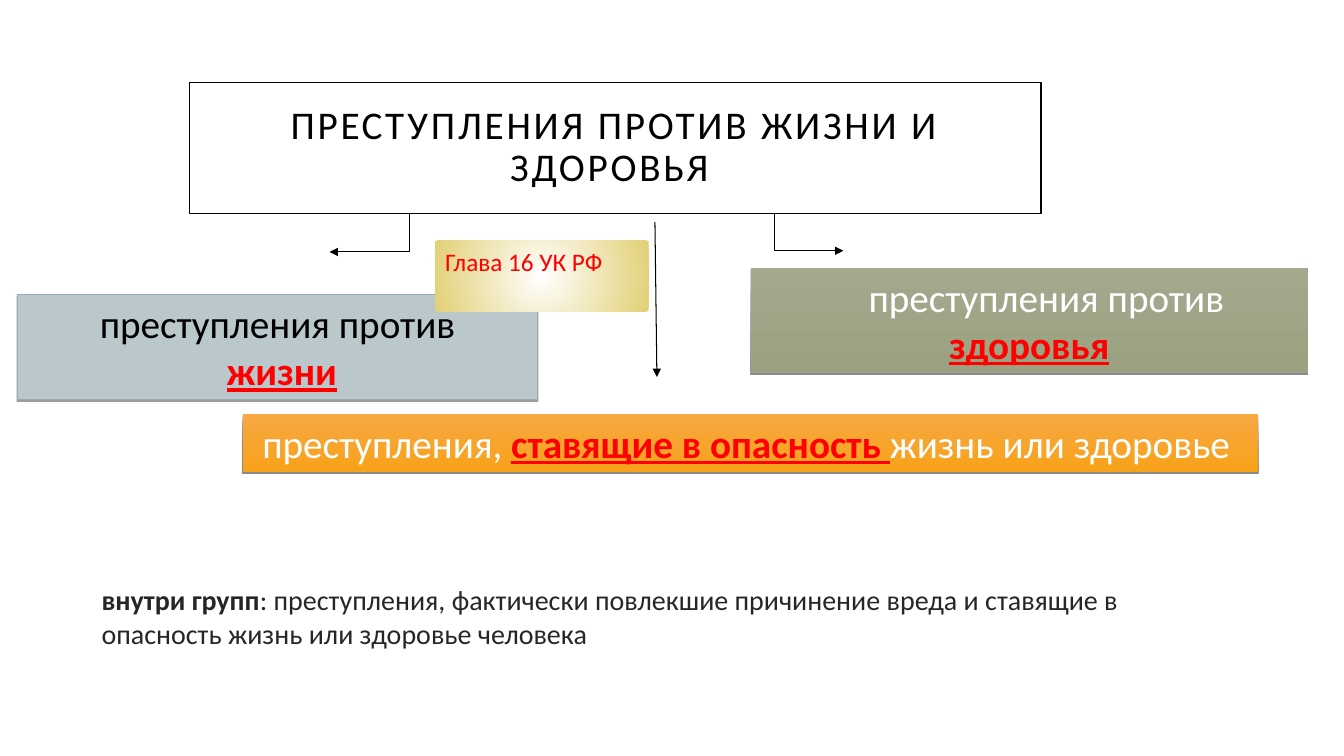
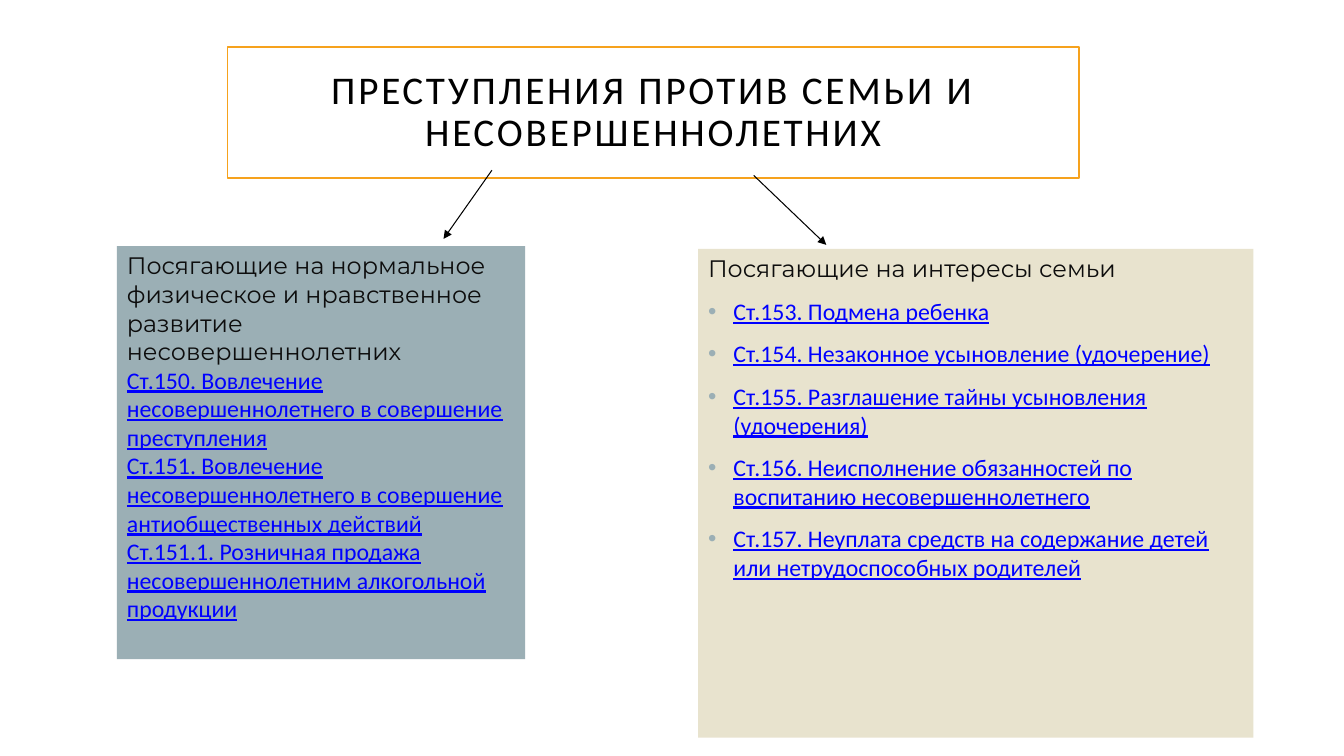
from dataclasses import dataclass

from lxml.etree import SubElement
from pptx import Presentation
from pptx.dml.color import RGBColor
from pptx.enum.shapes import MSO_CONNECTOR, MSO_SHAPE
from pptx.enum.text import MSO_ANCHOR, PP_ALIGN
from pptx.oxml.ns import qn
from pptx.util import Cm, Pt


@dataclass(frozen=True)
class Theme:
    font: str = "Calibri"
    head_font: str = "Montserrat"
    black: str = "000000"
    white: str = "FFFFFF"
    red: str = "FF0000"
    note: str = "262626"
    head: str = "0D0D0D"
    link: str = "0000FF"
    amber: str = "F6A21D"
    steel: str = "9BAFB5"
    sand: str = "E8E3CE"
    life: tuple = ("BAC8CB", "B8C6CB")
    life_line: str = "96ABB2"
    health: tuple = ("A3A98C", "9BA282")
    danger: tuple = ("F6A842", "F8A21A")
    chapter: tuple = ("FFFFFF", "E2D076")
    big: float = 28
    medium: float = 20
    small: float = 18
    article: float = 17
    thin: float = 0.75


T = Theme()


def rgb(color):
    return RGBColor.from_string(color)


def sub(parent, tag, **attrs):
    return SubElement(parent, qn(tag), {k: str(v) for k, v in attrs.items()})


def add_run(p, text, size=T.big, color=T.black, font=T.font, bold=False,
            underline=False, spacing=0):
    r = p.add_run()
    r.text = text
    f = r.font
    f.size, f.name, f.bold, f.underline = Pt(size), font, bold, underline
    f.color.rgb = rgb(color)
    if spacing:
        r._r.get_or_add_rPr().set("spc", str(spacing * 100))


def add_par(tf, align=PP_ALIGN.LEFT, indent=0, bullet=None, before=0):
    """Return the next paragraph; bullet is the colour of its mark."""
    p = tf.add_paragraph() if tf.text else tf.paragraphs[0]
    pPr = p._p.get_or_add_pPr()
    if bullet:
        hang = Cm(0.64)
        pPr.set("marL", str(hang))
        pPr.set("indent", str(-hang))
        sub(sub(pPr, "a:buClr"), "a:srgbClr", val=bullet)
        sub(pPr, "a:buFont", typeface="Arial")
        sub(pPr, "a:buChar", char="•")
    elif indent:
        pPr.set("indent", str(Cm(indent)))
    p.alignment = align
    if before:
        p.space_before = Pt(before)
    return p


def set_frame(tf, wrap=True, anchor=MSO_ANCHOR.TOP, inset=None):
    tf.word_wrap, tf.vertical_anchor = wrap, anchor
    tf.margin_left = tf.margin_right = Cm(inset or 0.25)
    tf.margin_top = tf.margin_bottom = Cm(inset or 0.13)
    return tf


def set_gradient(fill, colors, radial):
    fill.gradient()
    for stop, color in zip(fill.gradient_stops, colors):
        stop.color.rgb = rgb(color)
    if not radial:
        fill.gradient_angle = 270
        return
    grad = fill._xPr.find(qn("a:gradFill"))
    grad.remove(grad.find(qn("a:lin")))
    ring = sub(grad, "a:path", path="circle")
    sub(ring, "a:fillToRect", l=50000, t=50000, r=50000, b=50000)


def add_box(slide, x, y, w, h, fill, line=None, line_width=T.thin,
            radial=False, shadow=None, **frame):
    """Draw a box, return its text frame; shadow is (alpha %, distance pt)."""
    sp = slide.shapes.add_shape(MSO_SHAPE.RECTANGLE, Cm(x), Cm(y), Cm(w), Cm(h))
    if isinstance(fill, tuple):
        set_gradient(sp.fill, fill, radial)
    else:
        sp.fill.solid()
        sp.fill.fore_color.rgb = rgb(fill)
    if line:
        sp.line.color.rgb = rgb(line)
        sp.line.width = Pt(line_width)
    else:
        sp.line.fill.background()
    sp.shadow.inherit = False
    if shadow:
        alpha, dist = shadow
        effects = sp._element.spPr.find(qn("a:effectLst"))
        outer = sub(effects, "a:outerShdw", blurRad=0, dist=Pt(dist),
                    dir=5400000, rotWithShape=0)
        color = sub(outer, "a:srgbClr", val=T.black)
        sub(color, "a:alpha", val=alpha * 1000)
    return set_frame(sp.text_frame, **frame)


def add_title(slide, x, y, text, line):
    tf = add_box(slide, x, y, 21.46, 3.3, T.white, line, 1,
                 anchor=MSO_ANCHOR.MIDDLE, inset=0.51)
    p = add_par(tf, PP_ALIGN.CENTER)
    p.line_spacing = 0.9
    add_run(p, text, spacing=2)


def add_arrow(slide, x1, y1, x2, y2, kind=MSO_CONNECTOR.STRAIGHT, bend=None):
    """Draw an arrow; bend is the place of an elbow's turn, in percent."""
    c = slide.shapes.add_connector(kind, Cm(x1), Cm(y1), Cm(x2), Cm(y2))
    c.line.color.rgb = rgb(T.black)
    c.line.width = Pt(T.thin)
    spPr = c._element.spPr
    sub(c.line._get_or_add_ln(), "a:tailEnd", type="triangle")
    sub(spPr, "a:effectLst")
    if bend:
        guides = spPr.find(qn("a:prstGeom")).find(qn("a:avLst"))
        sub(guides, "a:gd", name="adj1", fmla=f"val {int(bend * 1000)}")


def add_articles(tf, heading, articles, **par):
    add_run(add_par(tf), heading, T.article, T.head, T.head_font)
    for article in articles:
        add_run(add_par(tf, **par), article, T.article, T.link, underline=True)


def build_life_and_health(slide):
    accent = dict(color=T.red, bold=True, underline=True)
    add_title(slide, 4.78, 2.08, "ПРЕСТУПЛЕНИЯ ПРОТИВ ЖИЗНИ И ЗДОРОВЬЯ ", T.black)

    note = slide.shapes.add_textbox(Cm(2.31), Cm(14.55), Cm(26.39), Cm(3))
    p = add_par(set_frame(note.text_frame))
    add_run(p, "внутри групп", T.medium, T.note, bold=True)
    add_run(p, ": преступления, фактически повлекшие причинение вреда и ставящие "
               "в опасность жизнь или здоровье человека", T.medium, T.note)

    add_arrow(slide, 12.32, 5.38, 8.31, 6.35, MSO_CONNECTOR.ELBOW)
    add_arrow(slide, 18.24, 5.38, 21.26, 6.32, MSO_CONNECTOR.ELBOW, bend=42.5)

    tf = add_box(slide, 0.43, 7.42, 13.13, 2.64, T.life, T.life_line,
                 shadow=(38, 1.6))
    add_run(add_par(tf, PP_ALIGN.CENTER), "преступления против")
    add_run(add_par(tf, PP_ALIGN.CENTER, indent=0.22), "жизни", **accent)

    tf = add_box(slide, 18.92, 6.76, 14.05, 2.64, T.health, shadow=(45, 1.2))
    p = add_par(tf, PP_ALIGN.CENTER, indent=0.86)
    add_run(p, "преступления против ", color=T.white)
    add_run(p, "здоровья", **accent)

    tf = add_box(slide, 10.97, 6.07, 5.38, 1.78, T.chapter, radial=True)
    add_run(add_par(tf), "Глава 16 УК РФ", T.small, T.red)

    add_arrow(slide, 16.51, 5.59, 16.56, 9.5)

    tf = add_box(slide, 6.12, 10.44, 25.6, 1.45, T.danger, shadow=(45, 1.2),
                 wrap=False)
    p = add_par(tf, PP_ALIGN.CENTER)
    add_run(p, "преступления, ", color=T.white)
    add_run(p, "ставящие в опасность ", **accent)
    add_run(p, "жизнь или здоровье ", color=T.white)


def build_family_and_minors(slide):
    add_title(slide, 5.74, 1.19, "ПРЕСТУПЛЕНИЯ ПРОТИВ СЕМЬИ И НЕСОВЕРШЕННОЛЕТНИХ",
              T.amber)
    add_articles(
        add_box(slide, 17.6, 6.27, 14, 12.32, T.sand),
        "Посягающие на интересы семьи",
        ["Ст.153. Подмена ребенка",
         "Ст.154. Незаконное усыновление (удочерение)",
         "Ст.155. Разглашение тайны усыновления (удочерения)",
         "Ст.156. Неисполнение обязанностей по воспитанию несовершеннолетнего",
         "Ст.157. Неуплата средств на содержание детей или нетрудоспособных "
         "родителей"],
        bullet=T.steel, before=10)
    add_articles(
        add_box(slide, 2.95, 6.2, 10.29, 10.41, T.steel),
        "Посягающие на нормальное физическое и нравственное развитие "
        "несовершеннолетних",
        ["Ст.150. Вовлечение несовершеннолетнего в совершение преступления",
         "Ст.151. Вовлечение несовершеннолетнего в совершение "
         "антиобщественных действий",
         "Ст.151.1. Розничная продажа несовершеннолетним алкогольной продукции"])
    add_arrow(slide, 12.4, 4.29, 11.18, 6.02)
    add_arrow(slide, 19, 4.42, 20.83, 6.17)


def main():
    prs = Presentation()
    prs.slide_width, prs.slide_height = Cm(33.88), Cm(19.05)
    for build in (build_life_and_health, build_family_and_minors):
        build(prs.slides.add_slide(prs.slide_layouts[6]))
    prs.save("out.pptx")


if __name__ == "__main__":
    main()
